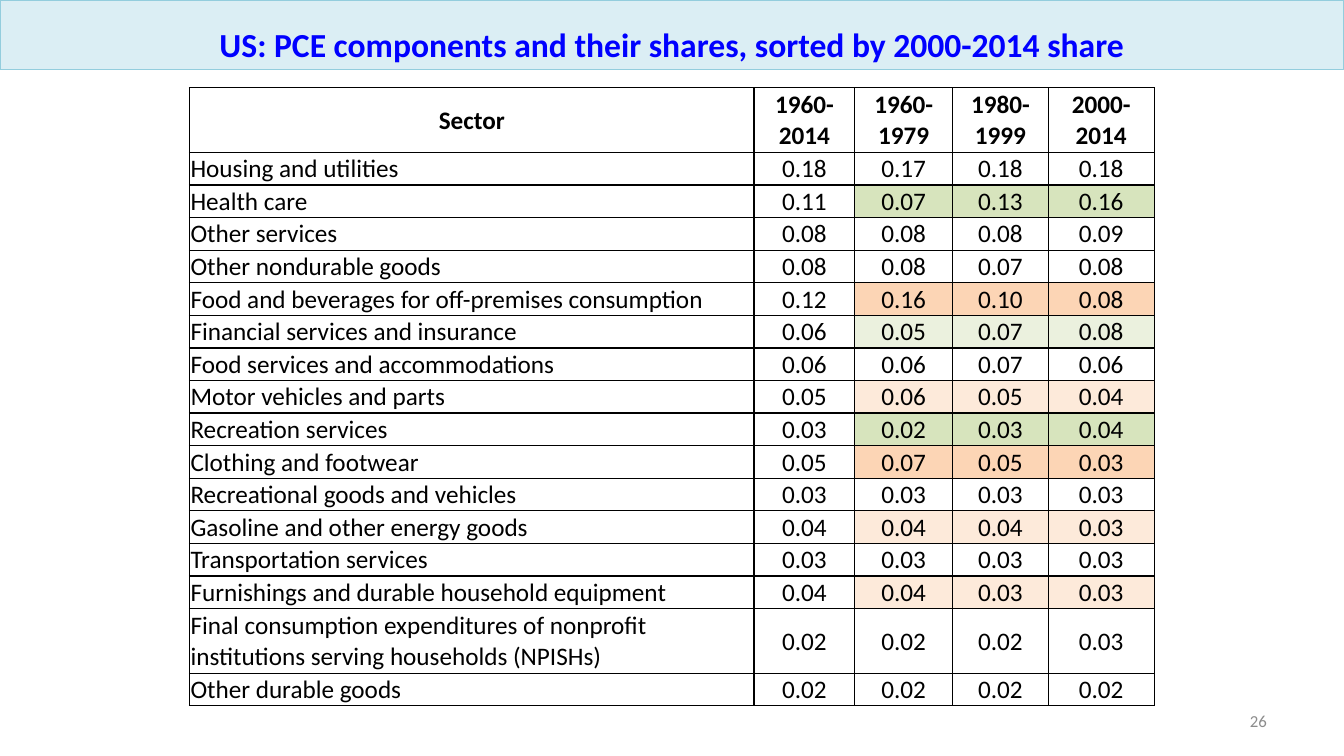
from dataclasses import dataclass

from lxml.etree import SubElement
from pptx import Presentation
from pptx.dml.color import RGBColor
from pptx.enum.shapes import MSO_SHAPE
from pptx.enum.text import MSO_ANCHOR, PP_ALIGN
from pptx.oxml.ns import qn
from pptx.util import Pt


@dataclass(frozen=True)
class Theme:
    font: str = "Calibri"
    head: int = 24
    body: int = 18
    foot: int = 12
    ink: str = "000000"
    blue: str = "0000FF"
    gray: str = "8C8C8C"
    band: str = "DBEEF4"
    edge: str = "93CDDD"


THEME = Theme()

# Row tints: strong and light rise, strong and light fall
RISE, UP = "D7E4BD", "EBF1DE"
DROP, DOWN = "FCD5B5", "FDEADA"

HEADS = ("Sector", "1960-2014", "1960-1979", "1980-1999", "2000-2014")
SECTORS = [
    ("Housing and utilities", "0.18 0.17 0.18 0.18", None),
    ("Health care", "0.11 0.07 0.13 0.16", RISE),
    ("Other services", "0.08 0.08 0.08 0.09", None),
    ("Other nondurable goods", "0.08 0.08 0.07 0.08", None),
    ("Food and beverages for off-premises consumption", "0.12 0.16 0.10 0.08", DROP),
    ("Financial services and insurance", "0.06 0.05 0.07 0.08", UP),
    ("Food services and accommodations", "0.06 0.06 0.07 0.06", None),
    ("Motor vehicles and parts", "0.05 0.06 0.05 0.04", DOWN),
    ("Recreation services", "0.03 0.02 0.03 0.04", RISE),
    ("Clothing and footwear", "0.05 0.07 0.05 0.03", DROP),
    ("Recreational goods and vehicles", "0.03 0.03 0.03 0.03", None),
    ("Gasoline and other energy goods", "0.04 0.04 0.04 0.03", DOWN),
    ("Transportation services", "0.03 0.03 0.03 0.03", None),
    ("Furnishings and durable household equipment", "0.04 0.04 0.03 0.03", DOWN),
    ("Final consumption expenditures of nonprofit institutions serving "
     "households (NPISHs)", "0.02 0.02 0.02 0.03", None),
    ("Other durable goods", "0.02 0.02 0.02 0.02", None),
]
COLS = (403.2, 72, 69.8, 68.4, 75.6)
ROW, TALL = 23.3, 46.2
TALL_ROWS = (0, 15)


def write(frame, text, size=THEME.body, color=THEME.ink, bold=False,
          align=PP_ALIGN.CENTER):
    para = frame.paragraphs[0]
    para.alignment = align
    run = para.add_run()
    run.text = text
    font = run.font
    font.name, font.size, font.bold = THEME.font, Pt(size), bold
    font.color.rgb = RGBColor.from_string(color)


def rule(cell):
    """Draw a thin line on all four sides of a cell."""
    props = cell._tc.get_or_add_tcPr()
    for side in ("lnL", "lnR", "lnT", "lnB"):
        line = SubElement(props, qn(f"a:{side}"), w=str(Pt(1)))
        fill = SubElement(line, qn("a:solidFill"))
        SubElement(fill, qn("a:srgbClr"), val=THEME.ink)


def add_title(slide, box, text):
    band = slide.shapes.add_shape(MSO_SHAPE.RECTANGLE, *map(Pt, box))
    band.shadow.inherit = False
    band.fill.solid()
    band.fill.fore_color.rgb = RGBColor.from_string(THEME.band)
    band.line.color.rgb = RGBColor.from_string(THEME.edge)
    band.line.width = Pt(0)
    frame = band.text_frame
    frame.word_wrap = True
    frame.vertical_anchor = MSO_ANCHOR.BOTTOM
    write(frame, text, size=THEME.head, color=THEME.blue, bold=True)


def fill_cell(cell, text, tint, **form):
    cell.vertical_anchor = MSO_ANCHOR.MIDDLE
    cell.margin_left = cell.margin_right = cell.margin_top = Pt(0.7)
    cell.margin_bottom = Pt(0)
    rule(cell)
    if tint:
        cell.fill.solid()
        cell.fill.fore_color.rgb = RGBColor.from_string(tint)
    else:
        cell.fill.background()
    write(cell.text_frame, text, **form)


def add_shares(slide, box):
    rows = [(HEADS, None)]
    rows += [((name, *nums.split()), tint) for name, nums, tint in SECTORS]
    table = slide.shapes.add_table(len(rows), len(COLS), *map(Pt, box)).table
    table.first_row = table.horz_banding = False
    for col, width in zip(table.columns, COLS):
        col.width = Pt(width)
    for i, (texts, tint) in enumerate(rows):
        table.rows[i].height = Pt(TALL if i in TALL_ROWS else ROW)
        for j, text in enumerate(texts):
            left = i > 0 and j == 0
            # Tints mark only the three sub-periods
            fill_cell(table.cell(i, j), text, tint if j > 1 else None,
                      bold=i == 0,
                      align=PP_ALIGN.LEFT if left else PP_ALIGN.CENTER)


def add_number(slide, box, text):
    frame = slide.shapes.add_textbox(*map(Pt, box)).text_frame
    frame.word_wrap = True
    frame.vertical_anchor = MSO_ANCHOR.MIDDLE
    write(frame, text, size=THEME.foot, color=THEME.gray, align=PP_ALIGN.RIGHT)


def main():
    deck = Presentation()
    deck.slide_width, deck.slide_height = Pt(960), Pt(540)
    slide = deck.slides.add_slide(deck.slide_layouts[6])
    add_number(slide, (688, 500.4, 224, 28.8), "26")
    add_title(slide, (0, 0, 960, 49.7),
              "US: PCE components and their shares, sorted by 2000-2014 share")
    add_shares(slide, (135.4, 62.7, 689, 442))
    deck.save("out.pptx")


if __name__ == "__main__":
    main()
